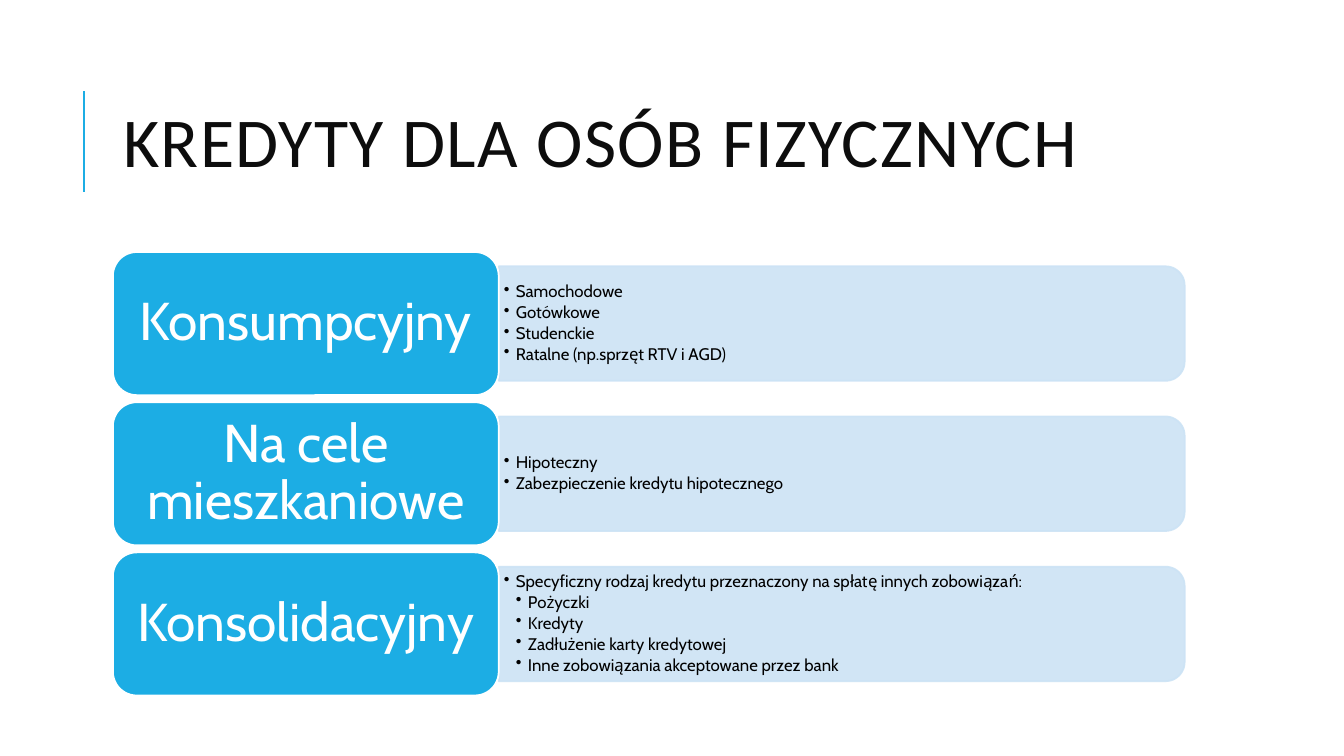
from dataclasses import dataclass
from math import cos, pi, sin

from lxml import etree
from pptx import Presentation, util as u
from pptx.dml.color import RGBColor
from pptx.enum import shapes, text
from pptx.oxml.ns import qn

TITLE = "KREDYTY DLA OSÓB FIZYCZNYCH"
LOANS = [
    ("Konsumpcyjny", [
        (1, "Samochodowe"),
        (1, "Gotówkowe"),
        (1, "Studenckie"),
        (1, "Ratalne (np.sprzęt RTV i AGD)"),
    ]),
    ("Na cele mieszkaniowe", [
        (1, "Hipoteczny"),
        (1, "Zabezpieczenie kredytu hipotecznego"),
    ]),
    ("Konsolidacyjny", [
        (1, "Specyficzny rodzaj kredytu przeznaczony na spłatę innych zobowiązań:"),
        (2, "Pożyczki"),
        (2, "Kredyty"),
        (2, "Zadłużenie karty kredytowej"),
        (2, "Inne zobowiązania akceptowane przez bank"),
    ]),
]


@dataclass(frozen=True)
class Theme:
    accent: str = "1CADE4"
    pale: str = "CCE3F5"
    white: str = "FFFFFF"
    ink: str = "0D0D0D"
    black: str = "000000"
    head: str = "Calibri"
    body: str = "Cabin"
    big: int = 50
    label: int = 38
    small: int = 12
    edge: float = 1.25


T = Theme()
WIDE, HIGH = 13.33, 7.5
LEFT, WIDTH = 1.12, 10.63
TOP, PITCH, ROW = 2.5, 1.49, 1.42
SPLIT = WIDTH * 0.36
BAR = ROW * 0.8
CURVE = BAR / 6
STEP = 0.12


def color(code):
    return RGBColor.from_string(code)


def font(para, name, size, code):
    para.font.name = name
    para.font.size = u.Pt(size)
    para.font.color.rgb = color(code)


def paint(shape, fill, line):
    shape.shadow.inherit = False
    shape.fill.solid()
    shape.fill.fore_color.rgb = color(fill)
    shape.line.color.rgb = color(line)
    shape.line.width = u.Pt(T.edge)


def frame(shape, pads):
    box = shape.text_frame
    box.word_wrap = True
    box.auto_size = text.MSO_AUTO_SIZE.NONE
    box.vertical_anchor = text.MSO_ANCHOR.MIDDLE
    box.margin_left, box.margin_top, box.margin_right, box.margin_bottom = map(u.Inches, pads)
    return box


def add_bar(slide, top, items):
    left, right, base = LEFT + SPLIT, LEFT + WIDTH, top + BAR
    turns = [i * pi / 24 for i in range(13)]
    upper = [(right - CURVE + CURVE * sin(a), top + CURVE - CURVE * cos(a)) for a in turns]
    lower = [(x, top + base - y) for x, y in reversed(upper)]
    pen = slide.shapes.build_freeform(u.Inches(left), u.Inches(top))
    pen.add_line_segments([(u.Inches(x), u.Inches(y)) for x, y in upper + lower + [(left, base)]])
    bar = pen.convert_to_shape()
    paint(bar, T.pale, T.pale)
    for tint in bar._element.spPr.iter(qn("a:srgbClr")):
        etree.SubElement(tint, qn("a:alpha")).set("val", "90000")
    box = frame(bar, (0.05, 0.08, 0.11, 0.08))
    for i, (level, words) in enumerate(items):
        para = box.add_paragraph() if i else box.paragraphs[0]
        para.text = words
        para.level = level
        para.alignment = text.PP_ALIGN.LEFT
        para.line_spacing = 0.9
        para.space_after = u.Pt(2)
        props = para._p.get_or_add_pPr()
        props.set("marL", str(u.Inches(STEP * level)))
        props.set("indent", str(-u.Inches(STEP)))
        etree.SubElement(props, qn("a:buChar")).set("char", "•")
        font(para, T.body, T.small, T.black)


def add_label(slide, top, words):
    tile = slide.shapes.add_shape(
        shapes.MSO_SHAPE.ROUNDED_RECTANGLE, *map(u.Inches, (LEFT, top, SPLIT, ROW)))
    paint(tile, T.accent, T.white)
    para = frame(tile, (0.16, 0.08, 0.16, 0.08)).paragraphs[0]
    para.text = words
    para.alignment = text.PP_ALIGN.CENTER
    para.line_spacing = 0.9
    para.space_after = u.Pt(16)
    font(para, T.body, T.label, T.white)


def add_title(slide):
    title = slide.shapes.title
    title.left, title.top, title.width, title.height = map(u.Inches, (LEFT, 0.64, WIDTH, 1.64))
    para = frame(title, (0.1, 0.05, 0.1, 0.05)).paragraphs[0]
    para.text = TITLE
    para.alignment = text.PP_ALIGN.LEFT
    para.line_spacing = 0.8
    font(para, T.head, T.big, T.ink)
    para._p.pPr.find(qn("a:defRPr")).set("spc", "100")
    rule = slide.shapes.add_connector(
        shapes.MSO_CONNECTOR.STRAIGHT, *map(u.Inches, (0.83, 1.9, 0.83, 0.9)))
    rule.line.color.rgb = color(T.accent)
    rule.line.width = u.Pt(1.5)
    etree.SubElement(rule._element.spPr, qn("a:effectLst"))


def main():
    deck = Presentation()
    deck.slide_width, deck.slide_height = u.Inches(WIDE), u.Inches(HIGH)
    slide = deck.slides.add_slide(deck.slide_layouts[5])
    add_title(slide)
    for i, (name, items) in enumerate(LOANS):
        top = TOP + i * PITCH
        add_bar(slide, top + (ROW - BAR) / 2, items)
        add_label(slide, top, name)
    deck.save("out.pptx")


if __name__ == "__main__":
    main()
